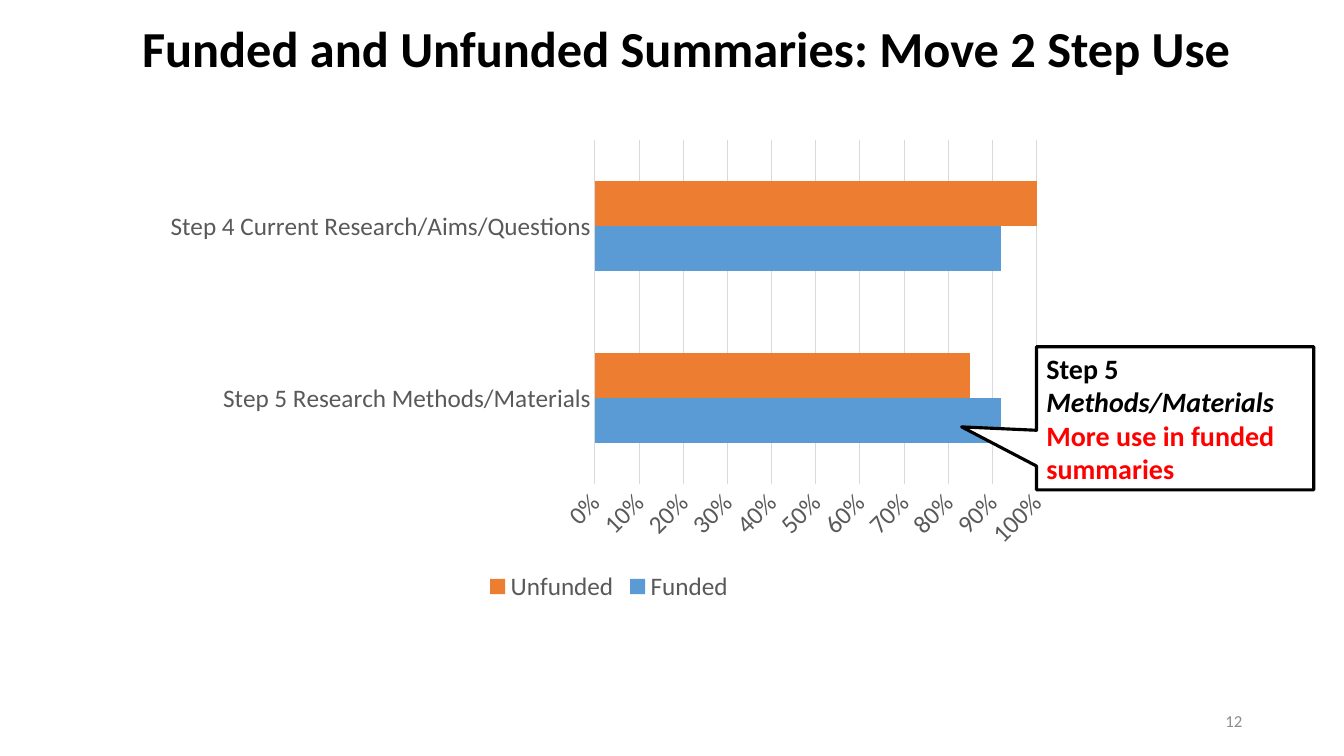
from dataclasses import dataclass

from pptx import Presentation
from pptx.chart.data import CategoryChartData
from pptx.dml.color import RGBColor
from pptx.enum.chart import XL_CHART_TYPE, XL_LEGEND_POSITION, XL_TICK_MARK
from pptx.enum.shapes import MSO_SHAPE
from pptx.enum.text import MSO_ANCHOR, PP_ALIGN
from pptx.util import Inches, Pt

FONT = "Calibri"
BLACK, WHITE, RED = "000000", "FFFFFF", "FF0000"
LABEL_GREY, RULE_GREY, NUMBER_GREY = "595959", "D9D9D9", "8C8C8C"


@dataclass
class Run:
    text: str
    size: float
    color: str = BLACK
    bold: bool = True
    italic: bool = False


@dataclass
class Series:
    name: str
    values: tuple[float, ...]
    color: str


CATEGORIES = ("Step 5 Research Methods/Materials",
              "Step 4 Current Research/Aims/Questions")
SERIES = (Series("Funded", (0.92, 0.92), "5B9BD5"),
          Series("Unfunded", (0.85, 1), "ED7D31"))


def rgb(color: str) -> RGBColor:
    return RGBColor.from_string(color)


def box(left: float, top: float, width: float, height: float) -> tuple:
    return tuple(Inches(v) for v in (left, top, width, height))


def style_font(font, size: float, color: str) -> None:
    font.name, font.size = FONT, Pt(size)
    font.color.rgb = rgb(color)


def style_line(line, color: str, width: float) -> None:
    line.color.rgb = rgb(color)
    line.width = Pt(width)


def write(sp, paragraphs: list[list[Run]], align: PP_ALIGN) -> None:
    tf = sp.text_frame
    tf.word_wrap = True
    tf.vertical_anchor = MSO_ANCHOR.MIDDLE
    for i, runs in enumerate(paragraphs):
        p = tf.add_paragraph() if i else tf.paragraphs[0]
        p.alignment = align
        for run in runs:
            r = p.add_run()
            r.text = run.text
            style_font(r.font, run.size, run.color)
            r.font.bold, r.font.italic = run.bold, run.italic


def add_step_chart(s) -> None:
    data = CategoryChartData(number_format="0%")
    data.categories = CATEGORIES
    for series in SERIES:
        data.add_series(series.name, series.values)
    chart = s.shapes.add_chart(XL_CHART_TYPE.BAR_CLUSTERED,
                               *box(1.51, 1.3, 9.06, 4.72), data).chart
    style_font(chart.font, 10, BLACK)
    chart.has_title = False

    # Bars
    plot = chart.plots[0]
    plot.gap_width = 182
    plot.vary_by_categories = False
    for bars, series in zip(plot.series, SERIES):
        bars.format.fill.solid()
        bars.format.fill.fore_color.rgb = rgb(series.color)

    # Axes
    cat, val = chart.category_axis, chart.value_axis
    for axis in (cat, val):
        axis.major_tick_mark = axis.minor_tick_mark = XL_TICK_MARK.NONE
        style_font(axis.tick_labels.font, 18, LABEL_GREY)
    style_line(cat.format.line, RULE_GREY, 0.75)
    val.format.line.fill.background()
    val.minimum_scale, val.maximum_scale = 0, 1
    val.major_unit = 0.1
    val.tick_labels.number_format = "0%"
    val.tick_labels.number_format_is_linked = False
    style_line(val.major_gridlines.format.line, RULE_GREY, 0.75)

    # Legend
    chart.has_legend = True
    chart.legend.position = XL_LEGEND_POSITION.BOTTOM
    chart.legend.include_in_layout = False
    style_font(chart.legend.font, 18, LABEL_GREY)


def add_callout(s) -> None:
    sp = s.shapes.add_shape(MSO_SHAPE.RECTANGULAR_CALLOUT,
                            *box(10.28, 3.44, 2.75, 1.42))
    sp.adjustments[0], sp.adjustments[1] = -0.77, 0.06
    sp.shadow.inherit = False
    sp.fill.solid()
    sp.fill.fore_color.rgb = rgb(WHITE)
    style_line(sp.line, BLACK, 2.25)
    write(sp, [[Run("Step 5 ", 20), Run("Methods/Materials", 20, italic=True)],
               [Run("More use in funded summaries", 20, RED)]], PP_ALIGN.LEFT)


def main() -> None:
    prs = Presentation()
    prs.slide_width, prs.slide_height = Inches(13.33), Inches(7.5)
    s = prs.slides.add_slide(prs.slide_layouts[5])

    # Title
    title = s.shapes.title
    title.left, title.top, title.width, title.height = box(1.06, 0.18, 11.5, 0.58)
    write(title, [[Run("Funded and Unfunded Summaries: Move 2 Step Use", 36)]],
          PP_ALIGN.CENTER)

    # Slide number
    number = s.shapes.add_textbox(*box(9.42, 6.95, 3, 0.4))
    write(number, [[Run("12", 12, NUMBER_GREY, bold=False)]], PP_ALIGN.RIGHT)

    # Chart and its callout
    add_step_chart(s)
    add_callout(s)
    prs.save("out.pptx")


if __name__ == "__main__":
    main()
